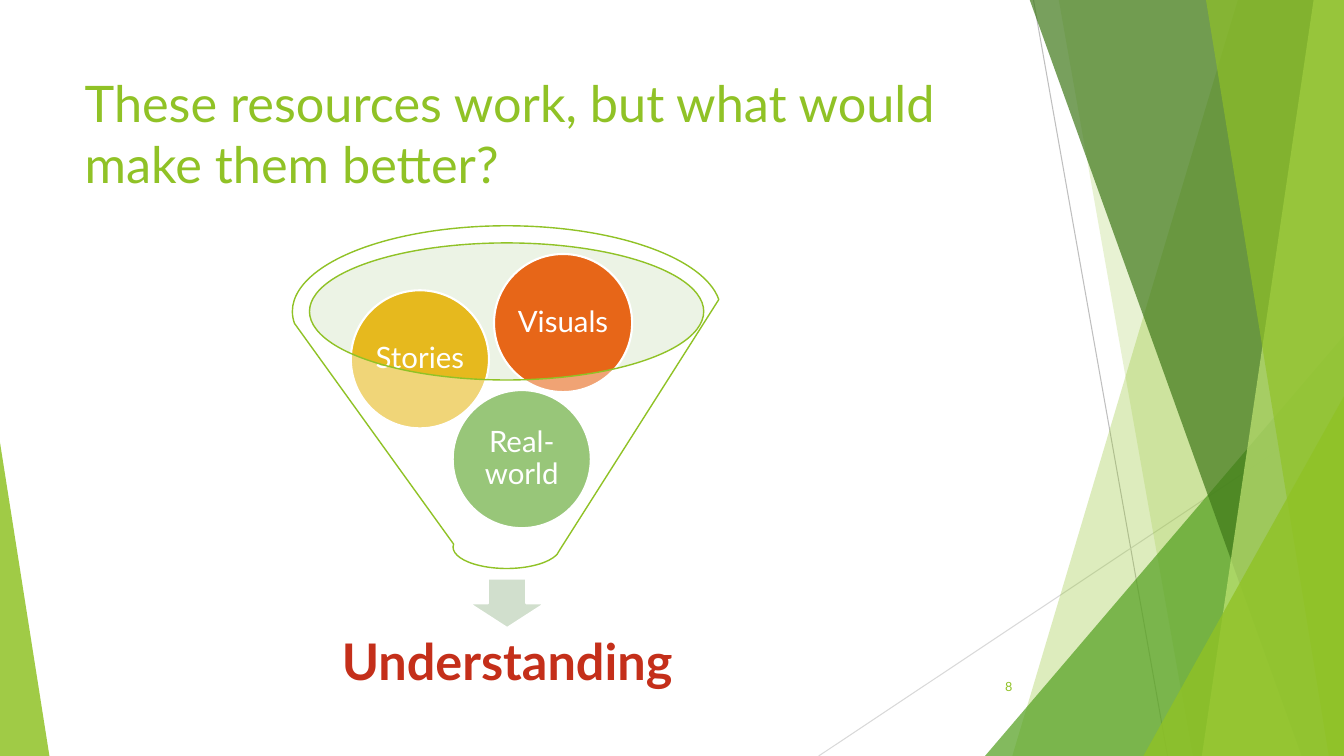
"""Build the slide asking what would make the resources better."""
from dataclasses import dataclass
from typing import Optional

from lxml.etree import SubElement
from pptx import Presentation
from pptx.dml.color import RGBColor
from pptx.enum.shapes import MSO_CONNECTOR, MSO_SHAPE as Preset
from pptx.enum.text import MSO_ANCHOR as Anchor, MSO_AUTO_SIZE, PP_ALIGN as Align
from pptx.oxml.ns import qn
from pptx.shapes.autoshape import Shape
from pptx.slide import Slide
from pptx.text.text import TextFrame
from pptx.util import Inches, Pt


@dataclass(frozen=True)
class Theme:
    font: str = "Lato"
    white: str = "FFFFFF"
    lime: str = "90C226"
    pale_lime: str = "C0E474"
    green: str = "54A021"
    forest: str = "3F7819"
    mouth: str = "D1E3BE"
    arrow: str = "D1DFCD"
    gold: str = "E6B91E"
    orange: str = "E76618"
    red: str = "C42F1A"
    dark_ray: str = "BFBFBF"
    light_ray: str = "D9D9D9"
    heading: float = 36
    ingredient: float = 21
    number: float = 9


@dataclass(frozen=True)
class Box:
    left: float
    top: float
    width: float
    height: float

    def lengths(self) -> tuple:
        return tuple(Inches(n) for n in (self.left, self.top, self.width, self.height))


@dataclass(frozen=True)
class Ray:
    start: tuple[float, float]
    end: tuple[float, float]
    color: str


@dataclass(frozen=True)
class Band:
    top_x: float
    bottom_x: float
    color: str
    opacity: int


@dataclass(frozen=True)
class Corner:
    width: float
    height: float
    color: str
    opacity: int
    on_right: bool = True


@dataclass(frozen=True)
class Ingredient:
    label: str
    left: float
    top: float
    color: str


THEME = Theme()
WIDTH, HEIGHT = 13.33, 7.5
BAND_TOP = -0.01
CIRCLE = 1.37

RAYS = [
    Ray((10.25, 0), (11.58, HEIGHT), THEME.dark_ray),
    Ray((WIDTH, 4.03), (8.12, HEIGHT), THEME.light_ray),
]
FACETS = [
    Band(12.28, 10.04, THEME.lime, 30),
    Band(10.5, 11.83, THEME.lime, 20),
    Corner(3.56, 4.17, THEME.green, 72),
    Band(10.21, 12.91, THEME.forest, 70),
    Band(13.03, 11.92, THEME.pale_lime, 70),
    Band(11.96, 13.18, THEME.lime, 65),
    Corner(1.99, 3.57, THEME.lime, 80),
    Corner(0.49, 3.11, THEME.lime, 85, on_right=False),
]
INGREDIENTS = [
    Ingredient("Real-world", 4.49, 3.87, THEME.green),
    Ingredient("Stories", 3.48, 2.88, THEME.gold),
    Ingredient("Visuals", 4.9, 2.52, THEME.orange),
]


def paint(shape: Shape, color: str, opacity: int = 100,
          line: Optional[str] = None, weight: float = 1.5) -> None:
    shape.shadow.inherit = False
    shape.fill.solid()
    shape.fill.fore_color.rgb = RGBColor.from_string(color)
    if opacity < 100:
        tint = shape.element.spPr.find(qn("a:solidFill"))[0]
        SubElement(tint, qn("a:alpha"), val=str(opacity * 1000))
    if line:
        shape.line.color.rgb = RGBColor.from_string(line)
        shape.line.width = Pt(weight)
    else:
        shape.line.fill.background()


def write(frame: TextFrame, text: str, size: float, color: str, align: Align,
          anchor: Anchor = Anchor.MIDDLE, inset: Optional[float] = None,
          spacing: float = 1.0, bold: bool = False) -> None:
    frame.word_wrap = True
    frame.auto_size = MSO_AUTO_SIZE.NONE
    frame.vertical_anchor = anchor
    if inset is not None:
        frame.margin_left = frame.margin_right = Inches(inset)
        frame.margin_top = frame.margin_bottom = Inches(inset)
    frame.text = text
    paragraph = frame.paragraphs[0]
    paragraph.alignment = align
    paragraph.line_spacing = spacing
    font = paragraph.font
    font.name, font.size, font.bold = THEME.font, Pt(size), bold
    font.color.rgb = RGBColor.from_string(color)


def add_preset(slide: Slide, preset: Preset, box: Box) -> Shape:
    return slide.shapes.add_shape(preset, *box.lengths())


def draw_ray(slide: Slide, ray: Ray) -> None:
    ends = [Inches(n) for n in ray.start + ray.end]
    connector = slide.shapes.add_connector(MSO_CONNECTOR.STRAIGHT, *ends)
    connector.line.color.rgb = RGBColor.from_string(ray.color)
    connector.line.width = Pt(0.75)
    SubElement(connector.element.spPr, qn("a:effectLst"))


def draw_band(slide: Slide, band: Band) -> None:
    outline = [(band.top_x, BAND_TOP), (WIDTH, BAND_TOP),
               (WIDTH, HEIGHT), (band.bottom_x, HEIGHT)]
    start, *rest = [(Inches(x), Inches(y)) for x, y in outline]
    builder = slide.shapes.build_freeform(*start)
    builder.add_line_segments(rest, close=True)
    paint(builder.convert_to_shape(), band.color, band.opacity)


def draw_corner(slide: Slide, corner: Corner) -> None:
    left = WIDTH - corner.width if corner.on_right else 0
    box = Box(left, HEIGHT - corner.height, corner.width, corner.height)
    triangle = add_preset(slide, Preset.ISOSCELES_TRIANGLE, box)
    triangle.adjustments[0] = 1.0 if corner.on_right else 0.0
    paint(triangle, corner.color, corner.opacity)


def draw_ingredient(slide: Slide, item: Ingredient) -> None:
    circle = add_preset(slide, Preset.OVAL, Box(item.left, item.top, CIRCLE, CIRCLE))
    paint(circle, item.color, line=THEME.white)
    write(circle.text_frame, item.label, THEME.ingredient, THEME.white,
          Align.CENTER, inset=0.03, spacing=0.9)


def draw_funnel(slide: Slide) -> None:
    mouth = add_preset(slide, Preset.OVAL, Box(3.06, 2.41, 3.92, 1.36))
    paint(mouth, THEME.mouth, 40)
    arrow = add_preset(slide, Preset.DOWN_ARROW, Box(4.65, 5.74, 0.76, 0.49))
    paint(arrow, THEME.arrow, line=THEME.white)
    outcome = slide.shapes.add_textbox(*Box(2.87, 6.13, 4.32, 0.91).lengths())
    write(outcome.text_frame, "Understanding", THEME.heading, THEME.red,
          Align.CENTER, inset=0.28, spacing=0.9, bold=True)
    for item in INGREDIENTS:
        draw_ingredient(slide, item)
    funnel = add_preset(slide, Preset.FUNNEL, Box(2.9, 2.24, 4.25, 3.4))
    paint(funnel, THEME.white, 40, THEME.lime, 1)


def main() -> None:
    deck = Presentation()
    deck.slide_width, deck.slide_height = Inches(WIDTH), Inches(HEIGHT)
    slide = deck.slides.add_slide(deck.slide_layouts[5])
    for ray in RAYS:
        draw_ray(slide, ray)
    for facet in FACETS:
        if isinstance(facet, Band):
            draw_band(slide, facet)
        else:
            draw_corner(slide, facet)
    title = slide.shapes.title
    title.left, title.top, title.width, title.height = Box(0.74, 0.67, 9.4, 1.44).lengths()
    write(title.text_frame, "These resources work, but what would make them better?",
          THEME.heading, THEME.lime, Align.LEFT, Anchor.TOP)
    draw_funnel(slide)
    number = slide.shapes.add_textbox(*Box(9.39, 6.61, 0.75, 0.4).lengths())
    write(number.text_frame, "8", THEME.number, THEME.lime, Align.RIGHT)
    deck.save("out.pptx")


if __name__ == "__main__":
    main()
